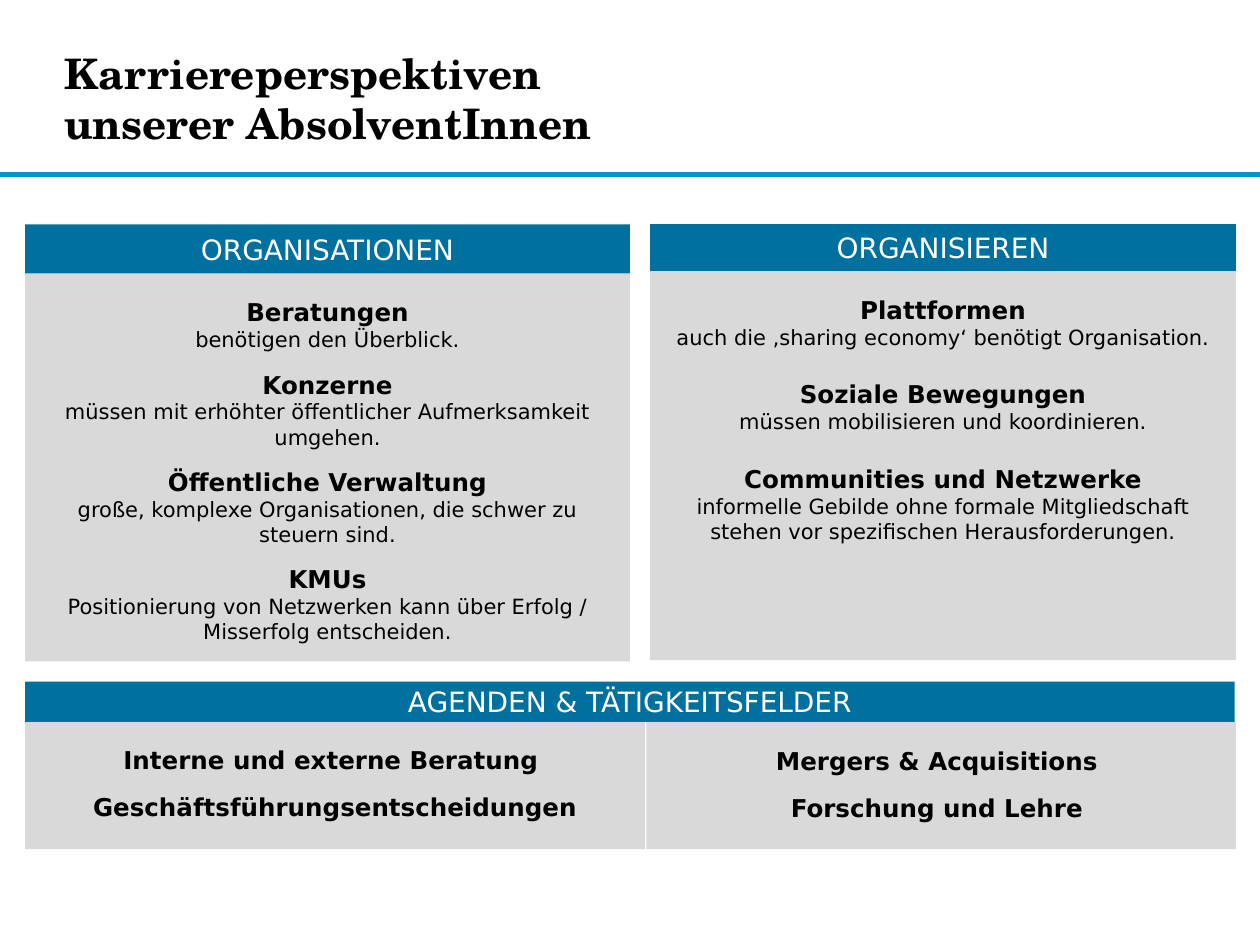
"""Build the slide on career prospects of graduates."""
from dataclasses import dataclass

from pptx import Presentation
from pptx.dml.color import RGBColor
from pptx.enum.shapes import MSO_SHAPE
from pptx.enum.text import MSO_ANCHOR, PP_ALIGN
from pptx.util import Inches, Pt


@dataclass(frozen=True)
class Theme:
    sans: str = "DejaVu Sans"
    serif: str = "TeX Gyre Schola"
    black: str = "000000"
    white: str = "FFFFFF"
    grey: str = "D9D9D9"
    blue: str = "00709E"
    rule: str = "0C94B7"
    edge: str = "0096D3"
    title: int = 24
    head: int = 16
    item: int = 14
    note: int = 12


@dataclass(frozen=True)
class Box:
    left: float
    top: float
    width: float
    height: float


@dataclass(frozen=True)
class Line:
    text: str
    size: int
    bold: bool = False
    gap: float = 0


@dataclass(frozen=True)
class Panel:
    box: Box
    items: tuple
    gap: float


THEME = Theme()

HEADS = (
    (Box(0.2, 1.78, 4.8, 0.39), "ORGANISATIONEN"),
    (Box(5.16, 1.78, 4.65, 0.37), "ORGANISIEREN"),
    (Box(0.2, 5.41, 9.6, 0.32), "AGENDEN & TÄTIGKEITSFELDER"),
)

PANELS = (
    Panel(Box(0.2, 2.17, 4.8, 3.08), (
        ("Beratungen", "benötigen den Überblick."),
        ("Konzerne", "müssen mit erhöhter öffentlicher Aufmerksamkeit umgehen."),
        ("Öffentliche Verwaltung",
         "große, komplexe Organisationen, die schwer zu steuern sind."),
        ("KMUs",
         "Positionierung von Netzwerken kann über Erfolg / Misserfolg entscheiden."),
    ), 10),
    Panel(Box(5.16, 2.15, 4.65, 3.09), (
        ("Plattformen", "auch die ‚sharing economy‘ benötigt Organisation."),
        ("Soziale Bewegungen", "müssen mobilisieren und koordinieren."),
        ("Communities und Netzwerke",
         "informelle Gebilde ohne formale Mitgliedschaft stehen vor "
         "spezifischen Herausforderungen."),
    ), 17),
    Panel(Box(0.2, 5.72, 4.92, 1.02), (
        ("Interne und externe Beratung ",),
        ("Geschäftsführungsentscheidungen",),
    ), 10),
    Panel(Box(5.13, 5.73, 4.68, 1.01), (
        ("Mergers & Acquisitions ",),
        ("Forschung und Lehre ",),
    ), 10),
)


def place(box: Box) -> tuple:
    """Return the box as four lengths."""
    return (Inches(box.left), Inches(box.top),
            Inches(box.width), Inches(box.height))


def draw_rect(slide, box: Box, fill: str):
    """Draw a flat rectangle without outline."""
    shape = slide.shapes.add_shape(MSO_SHAPE.RECTANGLE, *place(box))
    shape.shadow.inherit = False
    shape.fill.solid()
    shape.fill.fore_color.rgb = RGBColor.from_string(fill)
    shape.line.fill.background()
    return shape


def write(frame, lines: list[Line], face: str, color: str, align) -> None:
    """Fill a text frame with one paragraph per line."""
    frame.word_wrap = True
    frame.text = "\n".join(line.text for line in lines)
    for line, para in zip(lines, frame.paragraphs):
        para.alignment = align
        if line.gap:
            para.space_before = Pt(line.gap)
        for run in para.runs:
            run.font.name = face
            run.font.size = Pt(line.size)
            run.font.bold = line.bold
            run.font.color.rgb = RGBColor.from_string(color)


def draw_title(slide) -> None:
    """Draw the title and the rule below it."""
    rule = draw_rect(slide, Box(0, 1.37, 10, 0.03), THEME.rule)
    rule.line.color.rgb = RGBColor.from_string(THEME.edge)
    rule.line.width = Pt(1)
    frame = slide.shapes.add_textbox(*place(Box(0.51, 0.18, 7.27, 1.19))).text_frame
    frame.margin_left = frame.margin_right = Inches(0)
    frame.margin_top = frame.margin_bottom = Inches(0)
    frame.vertical_anchor = MSO_ANCHOR.MIDDLE
    lines = [Line(text, THEME.title, True)
             for text in ("Karriereperspektiven", "unserer AbsolventInnen")]
    write(frame, lines, THEME.serif, THEME.black, PP_ALIGN.LEFT)


def draw_panel(slide, panel: Panel) -> None:
    """Draw a grey panel with bold items and their notes."""
    frame = draw_rect(slide, panel.box, THEME.grey).text_frame
    frame.vertical_anchor = MSO_ANCHOR.TOP
    frame.margin_top = Inches(0.19)
    lines = []
    for name, *notes in panel.items:
        lines.append(Line(name, THEME.item, True, panel.gap if lines else 0))
        lines.extend(Line(note, THEME.note) for note in notes)
    write(frame, lines, THEME.sans, THEME.black, PP_ALIGN.CENTER)


def draw_head(slide, box: Box, text: str) -> None:
    """Draw a blue heading bar."""
    frame = draw_rect(slide, box, THEME.blue).text_frame
    frame.vertical_anchor = MSO_ANCHOR.MIDDLE
    write(frame, [Line(text, THEME.head)], THEME.sans, THEME.white, PP_ALIGN.CENTER)


def main() -> None:
    """Build and save the slide."""
    deck = Presentation()
    deck.slide_width, deck.slide_height = Inches(10), Inches(7.5)
    slide = deck.slides.add_slide(deck.slide_layouts[6])
    draw_title(slide)
    for panel in PANELS:
        draw_panel(slide, panel)
    for box, text in HEADS:
        draw_head(slide, box, text)
    deck.save("out.pptx")


if __name__ == "__main__":
    main()
